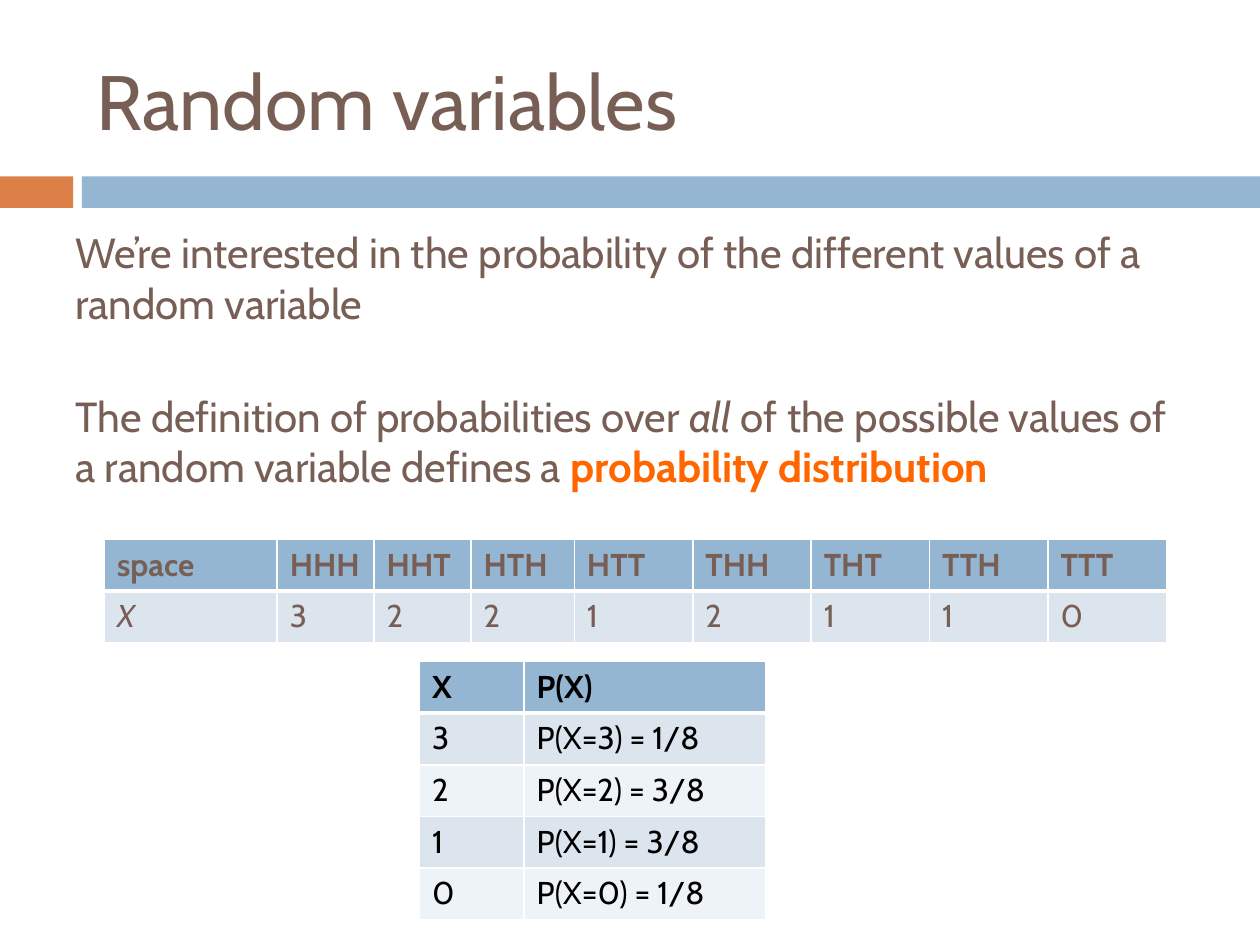
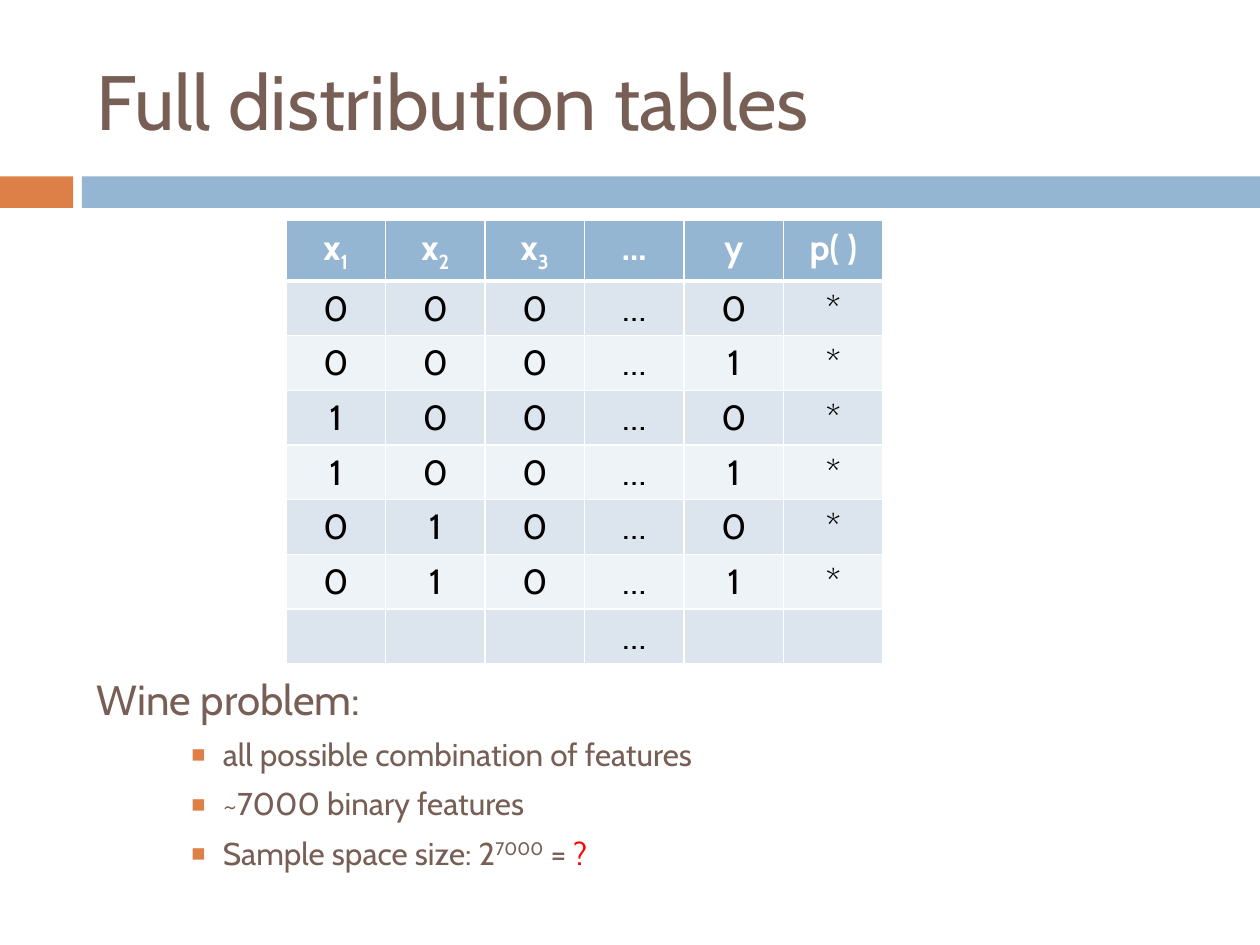
from lxml.etree import SubElement
from pptx import Presentation
from pptx.dml.color import RGBColor
from pptx.enum.shapes import MSO_SHAPE
from pptx.enum.text import MSO_ANCHOR, PP_ALIGN
from pptx.oxml import parse_xml
from pptx.oxml.ns import nsdecls, qn
from pptx.util import Inches, Pt

FONT = "Cabin"
BROWN = RGBColor(0x77, 0x5F, 0x55)
ORANGE = RGBColor(0xDD, 0x80, 0x47)
BLUE = RGBColor(0x94, 0xB6, 0xD2)
TERM = RGBColor(0xFF, 0x66, 0x00)
RED = RGBColor(0xFF, 0x00, 0x00)
BLACK = RGBColor(0x00, 0x00, 0x00)
WHITE = RGBColor(0xFF, 0xFF, 0xFF)
BANDS = RGBColor(0xDC, 0xE5, 0xEE), RGBColor(0xEE, 0xF3, 0xF7)


def write(par, parts, size, color, bold=False):
    """Fill a paragraph with parts: plain strings or (string, style) pairs."""
    for part in [parts] if isinstance(parts, str) else parts:
        text, style = (part, {}) if isinstance(part, str) else part
        run = par.add_run()
        run.text = text
        font = run.font
        font.name, font.size = FONT, Pt(size)
        font.bold = style.get("bold", bold)
        font.italic = style.get("italic", False)
        font.color.rgb = style.get("color", color)
        if "base" in style:
            run._r.get_or_add_rPr().set("baseline", str(style["base"] * 1000))


def add_box(slide, box):
    frame = slide.shapes.add_textbox(*map(Inches, box)).text_frame
    frame.word_wrap = True
    return frame


def add_bullet(par):
    props = par._p.get_or_add_pPr()
    props.set("marL", str(Inches(1)))
    props.set("indent", str(Inches(-0.25)))
    tint = SubElement(props, qn("a:buClr"))
    SubElement(tint, qn("a:srgbClr")).set("val", str(ORANGE))
    SubElement(props, qn("a:buSzPct")).set("val", "75000")
    SubElement(props, qn("a:buFont")).set("typeface", "Arial")
    SubElement(props, qn("a:buChar")).set("char", "■")


def set_edges(cell, top, bottom):
    """Draw white borders, one point wide at the sides."""
    props = cell._tc.get_or_add_tcPr()
    edges = {"L": 1, "R": 1, "T": top, "B": bottom}
    for place, (side, width) in enumerate(edges.items()):
        props.insert(place, parse_xml(
            f'<a:ln{side} {nsdecls("a")} w="{Pt(width)}"><a:solidFill>'
            f'<a:srgbClr val="{WHITE}"/></a:solidFill></a:ln{side}>'))


def add_grid(slide, left, top, widths, height, rows, size, head, body,
             align=PP_ALIGN.LEFT):
    """Place a table with a blue header row and two alternating bands."""
    shape = slide.shapes.add_table(
        len(rows), len(widths), Inches(left), Inches(top),
        Inches(sum(widths)), Inches(height * len(rows)))
    table = shape.table
    for col, width in zip(table.columns, widths):
        col.width = Inches(width)
    for i, row in enumerate(rows):
        table.rows[i].height = Inches(height)
        for j, parts in enumerate(row):
            cell = table.cell(i, j)
            cell.fill.solid()
            cell.fill.fore_color.rgb = BANDS[(i - 1) % 2] if i else BLUE
            set_edges(cell, 3 if i == 1 else 1, 1 if i else 3)
            par = cell.text_frame.paragraphs[0]
            par.alignment = align
            if parts:
                write(par, parts, size, body if i else head, bold=i == 0)


def add_base(deck, title):
    """Start a slide with the shared title and the two-part band."""
    slide = deck.slides.add_slide(deck.slide_layouts[6])
    for left, width, color in ((0, 0.58, ORANGE), (0.65, 9.35, BLUE)):
        bar = slide.shapes.add_shape(
            MSO_SHAPE.RECTANGLE, Inches(left), Inches(1.4),
            Inches(width), Inches(0.25))
        bar.shadow.inherit = False
        bar.fill.solid()
        bar.fill.fore_color.rgb = color
        bar.line.fill.background()
    frame = add_box(slide, (0.67, 0.25, 8.92, 1.08))
    frame.vertical_anchor = MSO_ANCHOR.MIDDLE
    write(frame.paragraphs[0], title, 44, BROWN)
    return slide


def add_intro(slide, box):
    frame = add_box(slide, box)
    write(frame.paragraphs[0], "We’re interested in the probability of the "
          "different values of a random variable", 24, BROWN)
    par = frame.add_paragraph()
    par.space_before = Pt(36)
    write(par, ["The definition of probabilities over ",
                ("all", {"italic": True}),
                " of the possible values of a random variable defines a ",
                ("probability distribution", {"bold": True, "color": TERM})],
          24, BROWN)


def add_wine(slide, box):
    frame = add_box(slide, box)
    lines = ["Wine problem:",
             "all possible combination of features",
             "~7000 binary features",
             ["Sample space size: 2", ("7000", {"base": 30}), " = ",
              ("?", {"color": RED})]]
    for i, parts in enumerate(lines):
        par = frame.add_paragraph() if i else frame.paragraphs[0]
        par.line_spacing = 0.93
        if i:
            par.space_before = Pt(8)
            add_bullet(par)
        write(par, parts, 18 if i else 24, BROWN)


def add_random(deck):
    slide = add_base(deck, "Random variables")
    add_intro(slide, (0.5, 1.75, 9, 2.5))
    # Value of X for each outcome of three tosses
    tosses = [a + b + c for a in "HT" for b in "HT" for c in "HT"]
    heads = [str(toss.count("H")) for toss in tosses]
    add_grid(slide, 0.83, 4.28, [1.37, 0.77, 0.77, 0.82] + [0.94] * 5, 0.41,
             [["space"] + tosses, [[("X", {"italic": True})]] + heads],
             18, BROWN, BROWN)
    # Chance of each value
    odds = [[x, f"P(X={x}) = {heads.count(x)}/8"] for x in "3210"]
    add_grid(slide, 3.33, 5.25, [0.83, 1.92], 0.41,
             [["X", "P(X)"]] + odds, 18, BLACK, BLACK)


def add_full(deck):
    slide = add_base(deck, "Full distribution tables")
    head = [["x", (n, {"base": -25})] for n in "123"] + ["…", "y", "p( )"]
    rows = [[*bits, "…", y, "*"] for bits in ("000", "100", "010")
            for y in "01"]
    last = ["", "", "", "…", "", ""]
    add_grid(slide, 2.27, 1.75, [0.79] * 6, 0.43, [head, *rows, last],
             20, WHITE, BLACK, PP_ALIGN.CENTER)
    add_wine(slide, (0.67, 5.33, 8.92, 1.75))


def main():
    deck = Presentation()
    deck.slide_width, deck.slide_height = Inches(10), Inches(7.5)
    add_random(deck)
    add_full(deck)
    deck.save("out.pptx")


if __name__ == "__main__":
    main()
